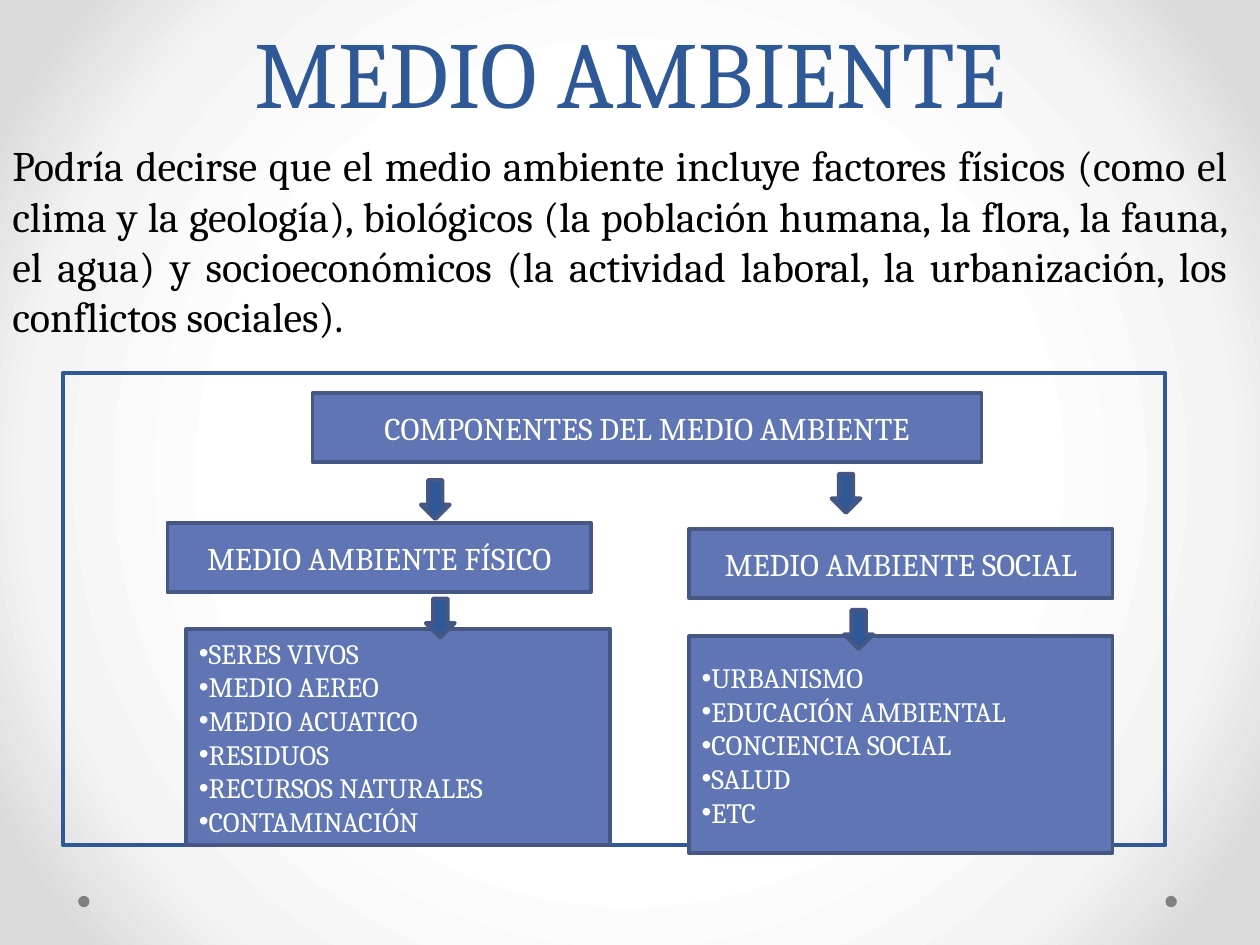
from dataclasses import dataclass

from lxml import etree
from pptx import Presentation
from pptx import util as u
from pptx.dml.color import RGBColor
from pptx.enum import shapes, text
from pptx.oxml.ns import qn

COLS, ROWS = 100, 75  # the slide's grid
WIDE, HIGH = u.Inches(10), u.Inches(7.5)
FONT = "Cambria"
HEX = {
    "blue": "2F5897", "box": "6076B4", "edge": "475785", "dot": "808080",
    "white": "FFFFFF", "black": "000000", "pale": "F4F4F4", "gray": "DADADA",
}
KIND = shapes.MSO_SHAPE
ALIGN = text.PP_ALIGN
ANCHOR = text.MSO_ANCHOR


@dataclass
class Area:
    """A place on the grid, in columns and rows."""
    col: float
    row: float
    wide: float
    high: float

    def spot(self) -> tuple:
        return (round(self.col * WIDE / COLS), round(self.row * HIGH / ROWS),
                round(self.wide * WIDE / COLS), round(self.high * HIGH / ROWS))


@dataclass
class Box:
    area: Area
    lines: list
    list: bool = False


def rgb(name: str) -> RGBColor:
    return RGBColor.from_string(HEX[name])


def write(frame, lines, size, color="white", align=ALIGN.CENTER,
          anchor=ANCHOR.MIDDLE, space=None, bullet=False) -> None:
    frame.word_wrap = True
    frame.vertical_anchor = anchor
    for i, line in enumerate(lines):
        par = frame.add_paragraph() if i else frame.paragraphs[0]
        par.alignment = align
        if space:
            par.line_spacing = u.Pt(space)
        if bullet:
            props = par._p.get_or_add_pPr()
            etree.SubElement(props, qn("a:buFont"), typeface="Arial")
            etree.SubElement(props, qn("a:buChar"), char="•")
        run = par.add_run()
        run.text = line
        run.font.size = u.Pt(size)
        run.font.name = FONT
        run.font.color.rgb = rgb(color)


def label(slide, area: Area, line: str, size: float, **form) -> None:
    frame = slide.shapes.add_textbox(*area.spot()).text_frame
    write(frame, [line], size, **form)


def draw(slide, kind, area: Area, fill=None, edge=None):
    shape = slide.shapes.add_shape(kind, *area.spot())
    shape.shadow.inherit = False
    if fill:
        shape.fill.solid()
        shape.fill.fore_color.rgb = rgb(fill)
    else:
        shape.fill.background()
    if edge:
        shape.line.color.rgb = rgb(edge)
        shape.line.width = u.Pt(2.25)
    else:
        shape.line.fill.background()
    return shape


def glow(slide) -> None:
    """Fill the background with a round gradient from the centre."""
    slide.background.fill.gradient()
    grad = slide._element.find(".//" + qn("a:gradFill"))
    for part in list(grad):
        grad.remove(part)
    stops = etree.SubElement(grad, qn("a:gsLst"))
    for share, name in ((50, "white"), (76, "pale"), (92, "gray")):
        stop = etree.SubElement(stops, qn("a:gs"), pos=str(share * 1000))
        etree.SubElement(stop, qn("a:srgbClr"), val=HEX[name])
    round_ = etree.SubElement(grad, qn("a:path"), path="circle")
    etree.SubElement(round_, qn("a:fillToRect"),
                     {side: "50000" for side in "ltrb"})


INTRO = ("Podría decirse que el medio ambiente incluye factores físicos (como "
         "el clima y la geología), biológicos (la población humana, la flora, "
         "la fauna, el agua) y socioeconómicos (la actividad laboral, la "
         "urbanización, los conflictos sociales).")
BRANCH, HEAD, LIST = 33.6, 5.5, 17.2  # box width, then the two heights
BOXES = [
    Box(Area(24.8, 31.2, 53.1, HEAD), ["COMPONENTES DEL MEDIO AMBIENTE"]),
    Box(Area(13.3, 41.5, BRANCH, HEAD), ["MEDIO AMBIENTE FÍSICO"]),
    Box(Area(54.7, 42, BRANCH, HEAD), ["MEDIO AMBIENTE SOCIAL"]),
    Box(Area(14.8, 49.9, BRANCH, LIST),
        ["SERES VIVOS", "MEDIO AEREO", "MEDIO ACUATICO", "RESIDUOS",
         "RECURSOS NATURALES", "CONTAMINACIÓN"], True),
    Box(Area(54.7, 50.5, BRANCH, LIST),
        ["URBANISMO", "EDUCACIÓN AMBIENTAL", "CONCIENCIA SOCIAL", "SALUD",
         "ETC"], True),
]
ARROWS = [(66, 37.6), (33.4, 38.1), (67, 48.4), (33.8, 47.5)]


def main() -> None:
    deck = Presentation()
    deck.slide_width, deck.slide_height = WIDE, HIGH
    slide = deck.slides.add_slide(deck.slide_layouts[6])
    glow(slide)
    for col in (92.5, 6.2):
        draw(slide, KIND.OVAL, Area(col, 71.1, 0.9, 0.9), "dot")
    draw(slide, KIND.RECTANGLE, Area(5, 29.6, 87.5, 37.5), edge="blue")
    label(slide, Area(5, 0, 90, 10.6), "MEDIO AMBIENTE", 54, color="blue",
          anchor=ANCHOR.BOTTOM, space=58)
    label(slide, Area(0, 10.6, 98.4, 28.9), INTRO, 24, color="black",
          align=ALIGN.JUSTIFY, anchor=ANCHOR.TOP)
    for box in BOXES:
        shape = draw(slide, KIND.RECTANGLE, box.area, "box", "edge")
        write(shape.text_frame, box.lines, 16 if box.list else 18,
              align=ALIGN.LEFT if box.list else ALIGN.CENTER, bullet=box.list)
    for col, row in ARROWS:
        draw(slide, KIND.DOWN_ARROW, Area(col, row, 2.3, 3.1), "blue", "edge")
    deck.save("out.pptx")


if __name__ == "__main__":
    main()
